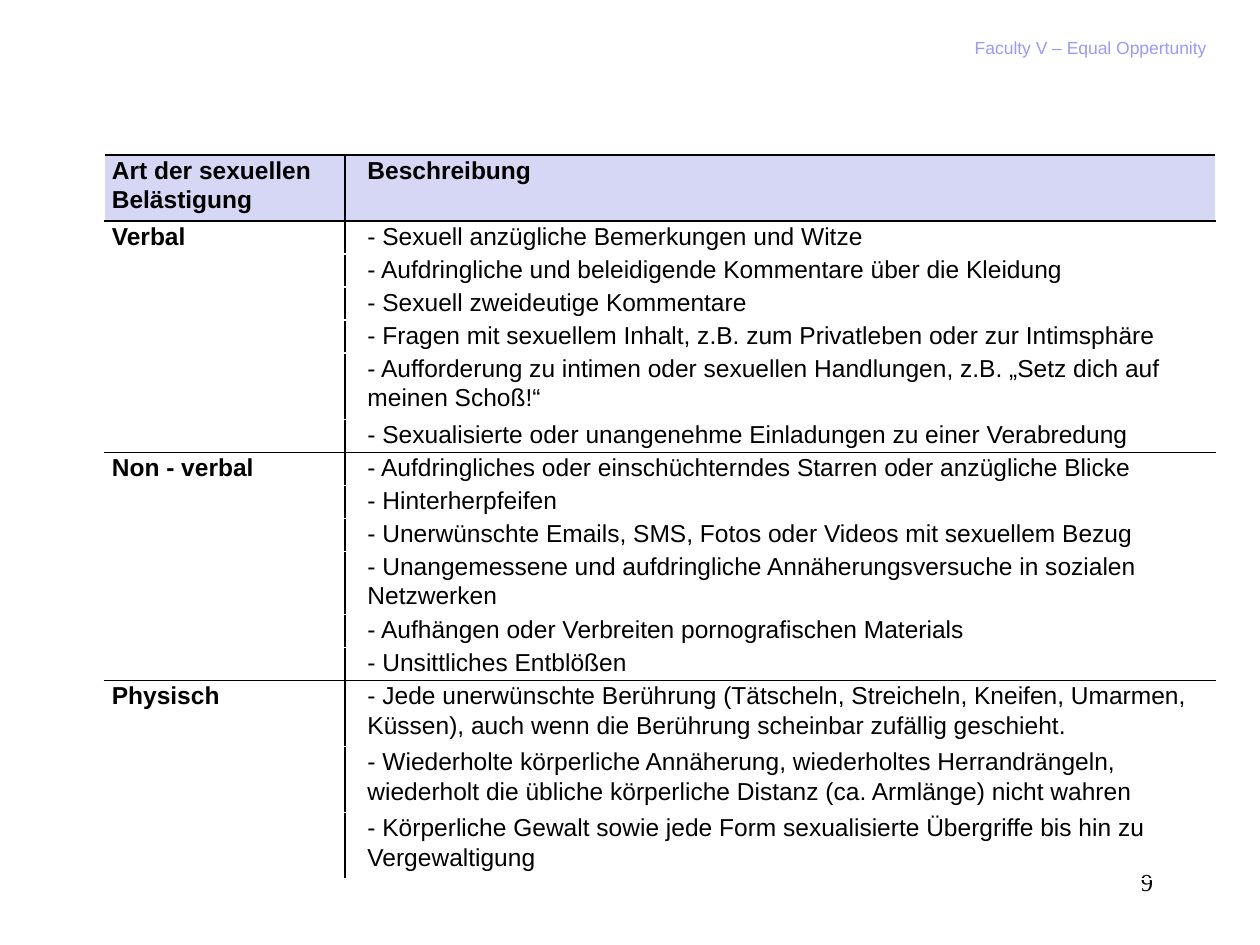
from pptx import Presentation
from pptx.dml.color import RGBColor as RGB
from pptx.enum.text import MSO_ANCHOR, PP_ALIGN
from pptx.oxml import parse_xml
from pptx.oxml.ns import nsdecls
from pptx.util import Pt

COLORS = {"text": "000000", "rule": "000000", "paper": "FFFFFF",
          "heading": "D6D6F5", "faculty": "9999FF"}
ONE_LINE, TWO_LINES = 18.9, 37.8
COLUMN_WIDTHS = (137.5, 497.5)
HEADINGS = ("Art der sexuellen Belästigung", "Beschreibung")
FORMS = {
    "Verbal": [
        ("Sexuell anzügliche Bemerkungen und Witze", ONE_LINE),
        ("Aufdringliche und beleidigende Kommentare über die Kleidung", ONE_LINE),
        ("Sexuell zweideutige Kommentare", ONE_LINE),
        ("Fragen mit sexuellem Inhalt, z.B. zum Privatleben oder zur Intimsphäre", ONE_LINE),
        ("Aufforderung zu intimen oder sexuellen Handlungen, z.B. „Setz dich auf meinen Schoß!“", TWO_LINES),
        ("Sexualisierte oder unangenehme Einladungen zu einer Verabredung", ONE_LINE),
    ],
    "Non - verbal": [
        ("Aufdringliches oder einschüchterndes Starren oder anzügliche Blicke", ONE_LINE),
        ("Hinterherpfeifen", ONE_LINE),
        ("Unerwünschte Emails, SMS, Fotos oder Videos mit sexuellem Bezug", ONE_LINE),
        ("Unangemessene und aufdringliche Annäherungsversuche in sozialen Netzwerken", ONE_LINE),
        ("Aufhängen oder Verbreiten pornografischen Materials", ONE_LINE),
        ("Unsittliches Entblößen", ONE_LINE),
    ],
    "Physisch": [
        ("Jede unerwünschte Berührung (Tätscheln, Streicheln, Kneifen, Umarmen, Küssen), "
         "auch wenn die Berührung scheinbar zufällig geschieht.", TWO_LINES),
        ("Wiederholte körperliche Annäherung, wiederholtes Herrandrängeln, "
         "wiederholt die übliche körperliche Distanz (ca. Armlänge) nicht wahren", TWO_LINES),
        ("Körperliche Gewalt sowie jede Form sexualisierte Übergriffe bis hin zu Vergewaltigung", TWO_LINES),
    ],
}


def style_font(font, name, size, color, bold=False):
    """Set the typeface, size, colour and weight."""
    font.name, font.size, font.bold = name, Pt(size), bold
    font.color.rgb = RGB.from_string(COLORS[color])


def add_right_text(slide, box, text, name, size, color):
    """Place one right-aligned line in the box."""
    frame = slide.shapes.add_textbox(*map(Pt, box)).text_frame
    frame.word_wrap = True
    frame.text = text
    line = frame.paragraphs[0]
    line.alignment = PP_ALIGN.RIGHT
    style_font(line.runs[0].font, name, size, color)


def draw_borders(cell, left, right, top, bottom):
    """Draw the four edges of a cell in the named colours."""
    properties = cell._tc.get_or_add_tcPr()
    for index, (side, color) in enumerate(zip("LRTB", (left, right, top, bottom))):
        properties.insert(index, parse_xml(
            f'<a:ln{side} {nsdecls("a")} w="{Pt(1)}"><a:solidFill>'
            f'<a:srgbClr val="{COLORS[color]}"/></a:solidFill></a:ln{side}>'))


def style_cell(cell, column, fill, top, bottom):
    """Set margins, fill and edges of a cell by its column."""
    cell.margin_left = cell.margin_right = Pt(4.3)
    cell.margin_top = cell.margin_bottom = 0
    cell.vertical_anchor = MSO_ANCHOR.TOP
    if fill:
        cell.fill.solid()
        cell.fill.fore_color.rgb = RGB.from_string(COLORS[fill])
    else:
        cell.fill.background()
    sides = ("paper", "rule") if column == 0 else ("rule", "paper")
    draw_borders(cell, *sides, top, bottom)


def write_cell(cell, column, text, bold):
    """Write the cell text, indented in the description column."""
    cell.text_frame.text = text
    entry = cell.text_frame.paragraphs[0]
    entry.line_spacing = 1.07
    if column == 1:
        properties = entry._p.get_or_add_pPr()
        properties.set("marL", str(Pt(8.6)))
        properties.set("indent", "0")
    style_font(entry.runs[0].font, "Arial", 14, "text", bold)


def keep_empty_cell_low(cell):
    """Give an empty cell a small text size, so its row does not grow."""
    ending = parse_xml(f'<a:endParaRPr {nsdecls("a")} sz="1000"/>')
    cell.text_frame.paragraphs[0]._p.append(ending)


def add_forms_table(slide, box):
    """Build the table of forms of harassment in the box."""
    row_count = 1 + sum(map(len, FORMS.values()))
    table = slide.shapes.add_table(row_count, 2, *map(Pt, box)).table
    table.first_row = table.horz_banding = False
    for column, width in enumerate(COLUMN_WIDTHS):
        table.columns[column].width = Pt(width)
        heading = table.cell(0, column)
        style_cell(heading, column, "heading", "rule", "rule")
        write_cell(heading, column, HEADINGS[column], True)
    table.rows[0].height = Pt(TWO_LINES)

    start = 1
    for form, descriptions in FORMS.items():
        end = start + len(descriptions) - 1
        for row, (description, height) in enumerate(descriptions, start):
            table.rows[row].height = Pt(height)
            top = "rule" if row == start else "paper"
            bottom = "rule" if row == end < row_count - 1 else "paper"
            form_cell, description_cell = table.cell(row, 0), table.cell(row, 1)
            style_cell(form_cell, 0, "paper", top, bottom)
            style_cell(description_cell, 1, None, top, bottom)
            write_cell(description_cell, 1, f"- {description}", False)
            if row == start:
                write_cell(form_cell, 0, form, True)
            else:
                keep_empty_cell_low(form_cell)
        start = end + 1


def main():
    """Build and save the slide."""
    deck = Presentation()
    deck.slide_width, deck.slide_height = Pt(720), Pt(540)
    slide = deck.slides.add_slide(deck.slide_layouts[6])
    add_right_text(slide, (342.4, 17.6, 354, 19), "Faculty V – Equal Oppertunity", "Arial", 10, "faculty")
    add_right_text(slide, (516, 492, 150, 36), "9", "Times New Roman", 14, "text")
    add_forms_table(slide, (59.6, 88.5, sum(COLUMN_WIDTHS), 414))
    deck.save("out.pptx")


if __name__ == "__main__":
    main()
